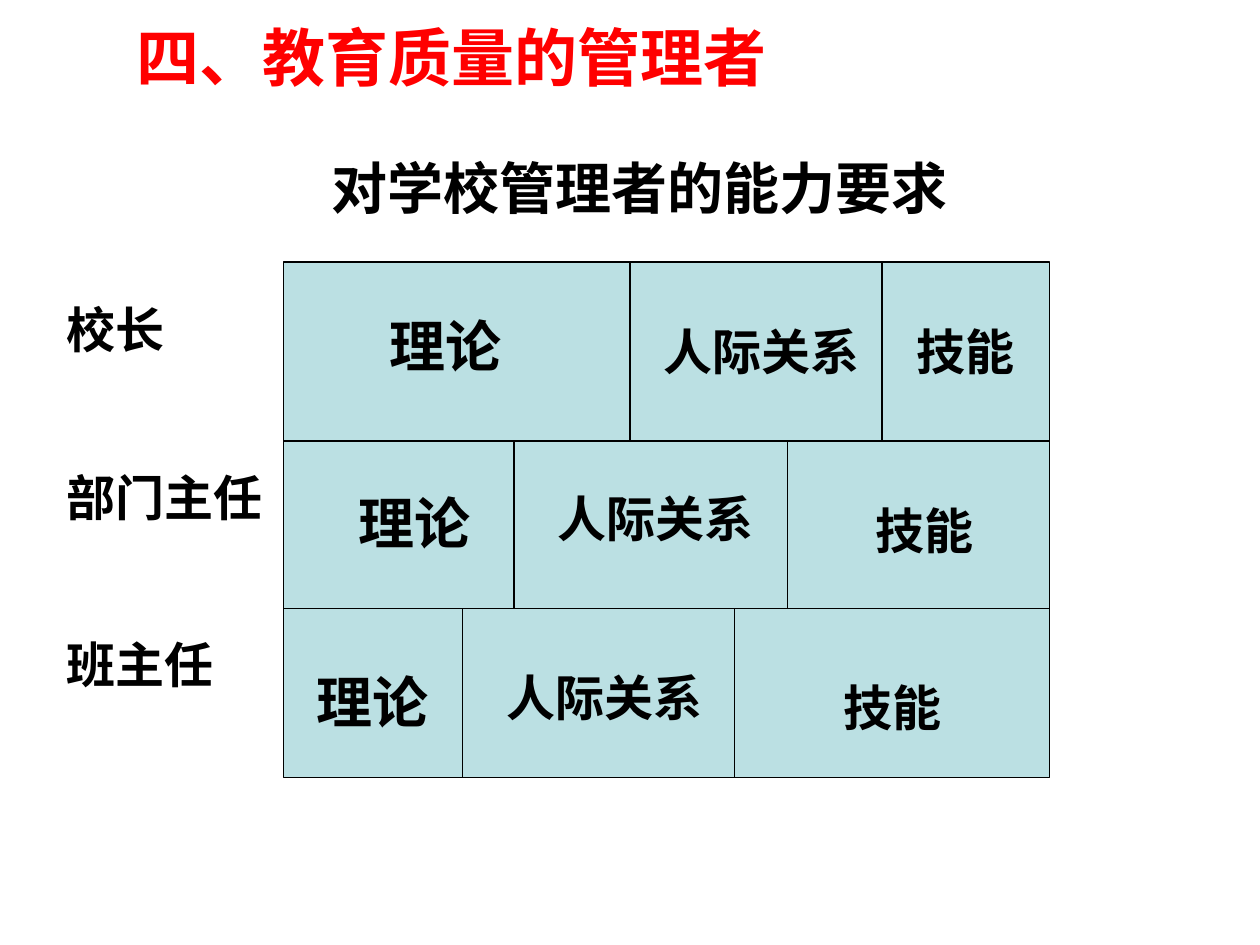
import pptx
import pptx.util
import pptx.dml.color
import pptx.enum.shapes
import pptx.enum.text
import pptx.oxml.ns
import lxml.etree

Inches = pptx.util.Inches
Pt = pptx.util.Pt
ALIGN = pptx.enum.text.PP_ALIGN

LEFT, RIGHT = 2.25, 8.33
ROW_EDGES = [2.08, 3.5, 4.83, 6.17]
DIVIDERS = [(5, 7), (4.08, 6.25), (3.67, 5.83)]
ROLES = ["校长", "部门主任", "班主任"]
SKILLS = [
    ("理论", 2.08, 0.63, 32, ALIGN.CENTER, [(2.5, 2.42), (2.25, 3.83), (1.92, 5.25)]),
    ("人际关系", 1.83, 0.57, 28, ALIGN.LEFT, [(5.17, 2.5), (4.33, 3.83), (3.92, 5.25)]),
    ("技能", 1.17, 0.57, 28, ALIGN.CENTER, [(7.08, 2.5), (6.75, 3.92), (6.5, 5.33)]),
]


def set_all(target, values):
    for name, value in values.items():
        setattr(target, name, value)


def set_colour(colour_format, colour):
    colour_format.rgb = pptx.dml.color.RGBColor.from_string(colour)


def add_child(parent, tag):
    return lxml.etree.SubElement(parent, pptx.oxml.ns.qn(tag))


def place(box, left, top, width, height):
    set_all(box, {"left": Inches(left), "top": Inches(top),
                  "width": Inches(width), "height": Inches(height)})


def write(box, lines, size, align=ALIGN.LEFT, font="Times New Roman",
          colour="000000", gap=0, wrap=True):
    frame = box.text_frame
    set_all(frame, {"text": "\n".join(lines), "word_wrap": wrap,
                    "auto_size": pptx.enum.text.MSO_AUTO_SIZE.NONE,
                    "vertical_anchor": pptx.enum.text.MSO_ANCHOR.TOP})
    for index, para in enumerate(frame.paragraphs):
        set_all(para, {"alignment": align, "space_before": Pt(gap if index else 0)})
        for span in para.runs:
            set_all(span.font, {"name": font, "size": Pt(size), "bold": True})
            set_colour(span.font.color, colour)


def add_label(page, area, text, size, align):
    box = page.shapes.add_textbox(*map(Inches, area))
    write(box, [text], size, align)


def style_line(line):
    line.width = Pt(0.75)
    set_colour(line.color, "000000")


def add_rule(page, x1, y1, x2, y2):
    rule = page.shapes.add_connector(
        pptx.enum.shapes.MSO_CONNECTOR.STRAIGHT, *map(Inches, (x1, y1, x2, y2)))
    style_line(rule.line)
    add_child(rule._element.spPr, "a:effectLst")


def add_grid(page):
    top, bottom = ROW_EDGES[0], ROW_EDGES[-1]
    panel = page.shapes.add_shape(
        pptx.enum.shapes.MSO_SHAPE.RECTANGLE,
        *map(Inches, (LEFT, top, RIGHT - LEFT, bottom - top)))
    panel.shadow.inherit = False
    panel.fill.solid()
    set_colour(panel.fill.fore_color, "BBE0E3")
    style_line(panel.line)
    for edge in ROW_EDGES[1:-1]:
        add_rule(page, LEFT, edge, RIGHT, edge)
    for upper, lower, positions in zip(ROW_EDGES, ROW_EDGES[1:], DIVIDERS):
        for x in positions:
            add_rule(page, x, upper, x, lower)


def fill_title(page):
    box = page.shapes.title
    place(box, 0.98, 0.1, 5.22, 0.7)
    write(box, ["四、教育质量的管理者"], 36, font="Arial", colour="FF0000", wrap=False)


def fill_roles(page):
    box = page.placeholders[1]
    place(box, 0.43, 2.33, 1.82, 3.37)
    box.text_frame.text = "\n".join(ROLES)
    write(box, ROLES, 28, gap=62)
    for para in box.text_frame.paragraphs:
        properties = para._p.get_or_add_pPr()
        properties.set("marL", "0")
        properties.set("indent", "0")
        add_child(properties, "a:buNone")


def main():
    deck = pptx.Presentation()
    set_all(deck, {"slide_width": Inches(10), "slide_height": Inches(7.5)})
    page = deck.slides.add_slide(deck.slide_layouts[1])
    fill_title(page)
    fill_roles(page)
    add_grid(page)
    for text, width, height, size, align, corners in SKILLS:
        for left, top in corners:
            add_label(page, (left, top, width, height), text, size, align)
    add_label(page, (1.58, 1.17, 7, 0.63), "对学校管理者的能力要求", 32, ALIGN.CENTER)
    deck.save("out.pptx")


if __name__ == "__main__":
    main()
